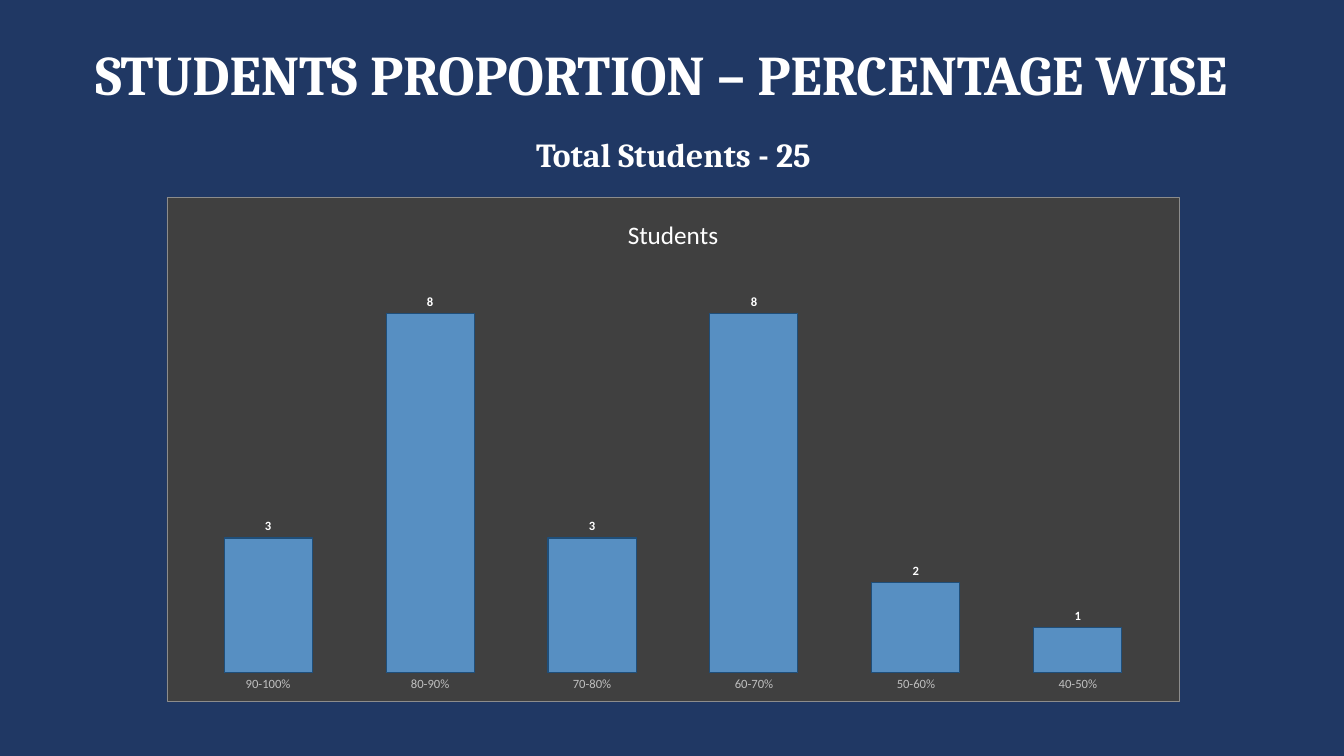
import lxml.etree
import pptx
import pptx.chart.data
import pptx.dml.color
import pptx.enum.chart
import pptx.enum.text
import pptx.oxml
import pptx.oxml.ns
import pptx.util

Pt = pptx.util.Pt
qn = pptx.oxml.ns.qn
WHITE = "FFFFFF"
BLUE = "5B9BD5"
BANDS = {"90-100%": 3, "80-90%": 8, "70-80%": 3,
         "60-70%": 8, "50-60%": 2, "40-50%": 1}


def rgb(value):
    """Turn a hex string into a colour."""
    return pptx.dml.color.RGBColor.from_string(value)


def style(font, name, size, color, bold=False):
    """Set the face, size, colour and weight of a font."""
    font.name, font.size, font.bold = name, Pt(size), bold
    font.color.rgb = rgb(color)


def fill_props(fill, line=None):
    """Return chart shape properties with a solid fill and an optional hairline."""
    border = ""
    if line:
        border = (f'<a:ln w="{Pt(0.5)}"><a:solidFill><a:srgbClr val="{line}"/>'
                  '</a:solidFill></a:ln>')
    return pptx.oxml.parse_xml(
        f'<c:spPr {pptx.oxml.ns.nsdecls("c", "a")}><a:solidFill>'
        f'<a:srgbClr val="{fill}"/></a:solidFill>{border}</c:spPr>')


def add_heading(sp, box, text, size):
    """Place one centred heading line in the box."""
    sp.left, sp.top, sp.width, sp.height = map(Pt, box)
    tf = sp.text_frame
    tf.word_wrap = True
    tf.vertical_anchor = pptx.enum.text.MSO_ANCHOR.MIDDLE
    p = tf.paragraphs[0]
    p.alignment = pptx.enum.text.PP_ALIGN.CENTER
    p.line_spacing = 1
    r = p.add_run()
    r.text = text
    style(r.font, "Cambria", size, WHITE, True)


def style_labels(plot):
    """Show bold values on blue patches above the columns."""
    plot.has_data_labels = True
    labels = plot.data_labels
    labels.show_value = True
    labels.position = pptx.enum.chart.XL_LABEL_POSITION.OUTSIDE_END
    style(labels.font, "Calibri", 9, WHITE, True)
    labels.font._element.getparent().getparent().addprevious(fill_props(BLUE))


def style_axes(chart):
    """Keep only the band names of the category axis."""
    axis = chart.category_axis
    axis.major_tick_mark = pptx.enum.chart.XL_TICK_MARK.NONE
    axis.format.line.fill.background()
    style(axis.tick_labels.font, "Calibri", 9, "BFBFBF")
    axis = chart.value_axis
    axis.minimum_scale, axis.maximum_scale = 0, 9
    axis.has_major_gridlines = False
    axis.visible = False


def add_student_chart(s, box):
    """Draw the column chart of students per percentage band in the box."""
    data = pptx.chart.data.CategoryChartData()
    data.categories = list(BANDS)
    data.add_series("Students", list(BANDS.values()))
    kind = pptx.enum.chart.XL_CHART_TYPE.COLUMN_CLUSTERED
    chart = s.shapes.add_chart(kind, *map(Pt, box), data).chart
    style(chart.font, "Calibri", 10, "000000")
    chart.has_legend = False
    chart.has_title = True
    r = chart.chart_title.text_frame.paragraphs[0].add_run()
    r.text = "Students"
    style(r.font, "Calibri", 18, WHITE)
    chart._chartSpace.find(qn("c:chart")).addnext(fill_props("404040", "8C8C8C"))

    plot = chart.plots[0]
    plot.gap_width = 84
    plot.vary_by_categories = False
    series = plot.series[0]
    series.format.fill.solid()
    series.format.fill.fore_color.rgb = rgb(BLUE)
    color = series._element.find(qn("c:spPr")).find(".//" + qn("a:srgbClr"))
    lxml.etree.SubElement(color, qn("a:alpha")).set("val", "88000")
    series.format.line.width = Pt(0.75)
    series.format.line.color.rgb = rgb("1F4E79")
    style_labels(plot)
    style_axes(chart)


def build_proportion_slide(prs):
    """Build the slide with its headings and chart."""
    s = prs.slides.add_slide(prs.slide_layouts[5])
    s.background.fill.solid()
    s.background.fill.fore_color.rgb = rgb("203864")
    add_heading(s.shapes.title, (23, 24.5, 899, 55.5),
                "STUDENTS PROPORTION – PERCENTAGE WISE", 40)
    total = s.shapes.add_textbox(0, 0, 0, 0)
    add_heading(total, (85, 92, 792, 36), "Total Students - 25", 24)
    add_student_chart(s, (119, 140.5, 723.5, 361))


def main():
    """Create and save the presentation."""
    prs = pptx.Presentation()
    prs.slide_width, prs.slide_height = Pt(960), Pt(540)
    build_proportion_slide(prs)
    prs.save("out.pptx")


if __name__ == "__main__":
    main()
